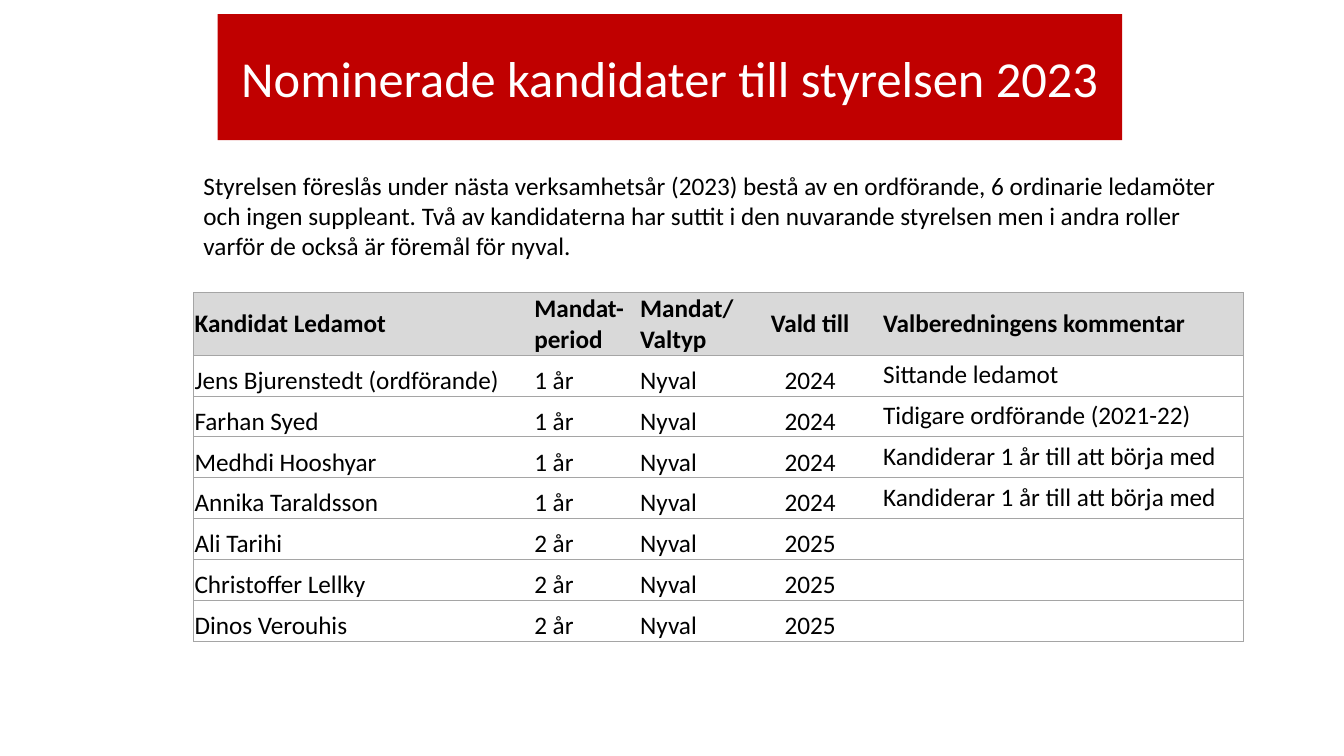
"""Build the slide that lists the nominees for the board."""
from dataclasses import dataclass

from lxml import etree
from pptx import Presentation
from pptx.dml.color import RGBColor
from pptx.enum.text import MSO_ANCHOR, MSO_AUTO_SIZE, PP_ALIGN
from pptx.oxml.ns import qn
from pptx.util import Inches, Pt

LEFT, CENTER = PP_ALIGN.LEFT, PP_ALIGN.CENTER
TOP, MIDDLE, BOTTOM = MSO_ANCHOR.TOP, MSO_ANCHOR.MIDDLE, MSO_ANCHOR.BOTTOM
NO_FIT, GROW = MSO_AUTO_SIZE.NONE, MSO_AUTO_SIZE.SHAPE_TO_FIT_TEXT
TITLE_ONLY = 5
SLIDE_WIDTH, SLIDE_HEIGHT = Inches(13.33), Inches(7.5)


@dataclass(frozen=True)
class Theme:
    """Colours, font and type sizes of the slide."""
    font: str = "Calibri"
    title_size: int = 36
    body_size: int = 18
    banner: str = "C00000"
    banner_text: str = "FFFFFF"
    text: str = "000000"
    header: str = "D9D9D9"
    rule: str = "A5A5A5"
    rule_width: float = 0.5


THEME = Theme()
TITLE = "Nominerade kandidater till styrelsen 2023"
INTRO = (
    "Styrelsen föreslås under nästa verksamhetsår (2023) bestå av en ordförande, "
    "6 ordinarie ledamöter och ingen suppleant. Två av kandidaterna har suttit i den "
    "nuvarande styrelsen men i andra roller varför de också är föremål för nyval."
)
HEADINGS = ("Kandidat Ledamot", "Mandat-\nperiod", "Mandat/\nValtyp", "Vald till",
            "Valberedningens kommentar")
CANDIDATES = (
    ("Jens Bjurenstedt (ordförande)", 1, "Sittande ledamot"),
    ("Farhan Syed", 1, "Tidigare ordförande (2021-22)"),
    ("Medhdi Hooshyar", 1, "Kandiderar 1 år till att börja med"),
    ("Annika Taraldsson", 1, "Kandiderar 1 år till att börja med"),
    ("Ali Tarihi", 2, ""),
    ("Christoffer Lellky", 2, ""),
    ("Dinos Verouhis", 2, ""),
)
ELECTION_YEAR = 2023
COLUMN_SHARES = (25.28, 7.88, 8.03, 9.38, 27.53)
ROW_SHARE = 5.42
TERM_END_COLUMN, COMMENT_COLUMN = 3, 4
TIGHT_MARGINS = {"margin_left": Inches(0.01), "margin_right": Inches(0.01),
                 "margin_top": Inches(0.01), "margin_bottom": 0}


def across(share):
    """Return a percentage of the slide width."""
    return round(SLIDE_WIDTH * share / 100)


def down(share):
    """Return a percentage of the slide height."""
    return round(SLIDE_HEIGHT * share / 100)


def area(left, top, width, height):
    """Return a box given in percentages of the slide."""
    return across(left), down(top), across(width), down(height)


def apply_format(target, values):
    """Set each named attribute on the target."""
    for name, value in values.items():
        setattr(target, name, value)


def write(frame, text, size, color, bold=False, align=LEFT):
    """Write one formatted paragraph into a text frame."""
    paragraph = frame.paragraphs[0]
    paragraph.text = text
    paragraph.alignment = align
    for run in paragraph.runs:
        apply_format(run.font, {"name": THEME.font, "size": Pt(size), "bold": bold})
        run.font.color.rgb = RGBColor.from_string(color)


def add_title(slide):
    """Turn the title placeholder into the red banner."""
    banner = slide.shapes.title
    box = area(16.2, 1.87, 67.29, 16.67)
    apply_format(banner, dict(zip(("left", "top", "width", "height"), box)))
    banner.fill.solid()
    banner.fill.fore_color.rgb = RGBColor.from_string(THEME.banner)
    apply_format(banner.text_frame, {"word_wrap": True, "auto_size": NO_FIT,
                                     "vertical_anchor": MIDDLE})
    write(banner.text_frame, TITLE, THEME.title_size, THEME.banner_text, align=CENTER)


def add_intro(slide):
    """Add the paragraph above the table."""
    intro = slide.shapes.add_textbox(*area(14.4, 21.87, 77.12, 13.47))
    apply_format(intro.text_frame, {"word_wrap": True, "auto_size": GROW})
    write(intro.text_frame, INTRO, THEME.body_size, THEME.text)


def rule_cell(cell, ruled_sides):
    """Draw the ruled sides of a cell and clear the others."""
    properties = cell._tc.get_or_add_tcPr()
    for side in "LRTB":
        edge = etree.SubElement(properties, qn(f"a:ln{side}"),
                                w=str(Pt(THEME.rule_width)))
        if side in ruled_sides:
            paint = etree.SubElement(edge, qn("a:solidFill"))
            etree.SubElement(paint, qn("a:srgbClr"), val=THEME.rule)
        else:
            etree.SubElement(edge, qn("a:noFill"))


def fill_cell(cell, text, column, is_heading):
    """Write and format one cell of the candidate table."""
    is_comment = column == COMMENT_COLUMN
    outer_side = {0: "L", COMMENT_COLUMN: "R"}.get(column, "")
    rule_cell(cell, "TB" + outer_side)
    if is_heading:
        cell.fill.solid()
        cell.fill.fore_color.rgb = RGBColor.from_string(THEME.header)
    else:
        cell.fill.background()
    body_anchor = TOP if is_comment else BOTTOM
    cell.vertical_anchor = MIDDLE if is_heading else body_anchor
    if not is_comment:
        apply_format(cell, TIGHT_MARGINS)
    align = CENTER if column == TERM_END_COLUMN else LEFT
    write(cell.text_frame, text, THEME.body_size, THEME.text, is_heading, align)


def add_candidates(slide):
    """Add the table with headings and one row per candidate."""
    rows = [HEADINGS] + [
        (name, f"{years} år", "Nyval", str(ELECTION_YEAR + years), comment)
        for name, years, comment in CANDIDATES
    ]
    box = area(14.4, 38.67, sum(COLUMN_SHARES), ROW_SHARE * len(rows))
    table = slide.shapes.add_table(len(rows), len(HEADINGS), *box).table
    apply_format(table, {"first_row": False, "horz_banding": False})
    for column, share in zip(table.columns, COLUMN_SHARES):
        column.width = across(share)
    for row_index, row in enumerate(rows):
        table.rows[row_index].height = down(ROW_SHARE)
        for column_index, text in enumerate(row):
            fill_cell(table.cell(row_index, column_index), text, column_index,
                      row_index == 0)


def main():
    """Build and save the slide."""
    presentation = Presentation()
    apply_format(presentation, {"slide_width": SLIDE_WIDTH, "slide_height": SLIDE_HEIGHT})
    slide = presentation.slides.add_slide(presentation.slide_layouts[TITLE_ONLY])
    add_title(slide)
    add_candidates(slide)
    add_intro(slide)
    presentation.save("out.pptx")


if __name__ == "__main__":
    main()
